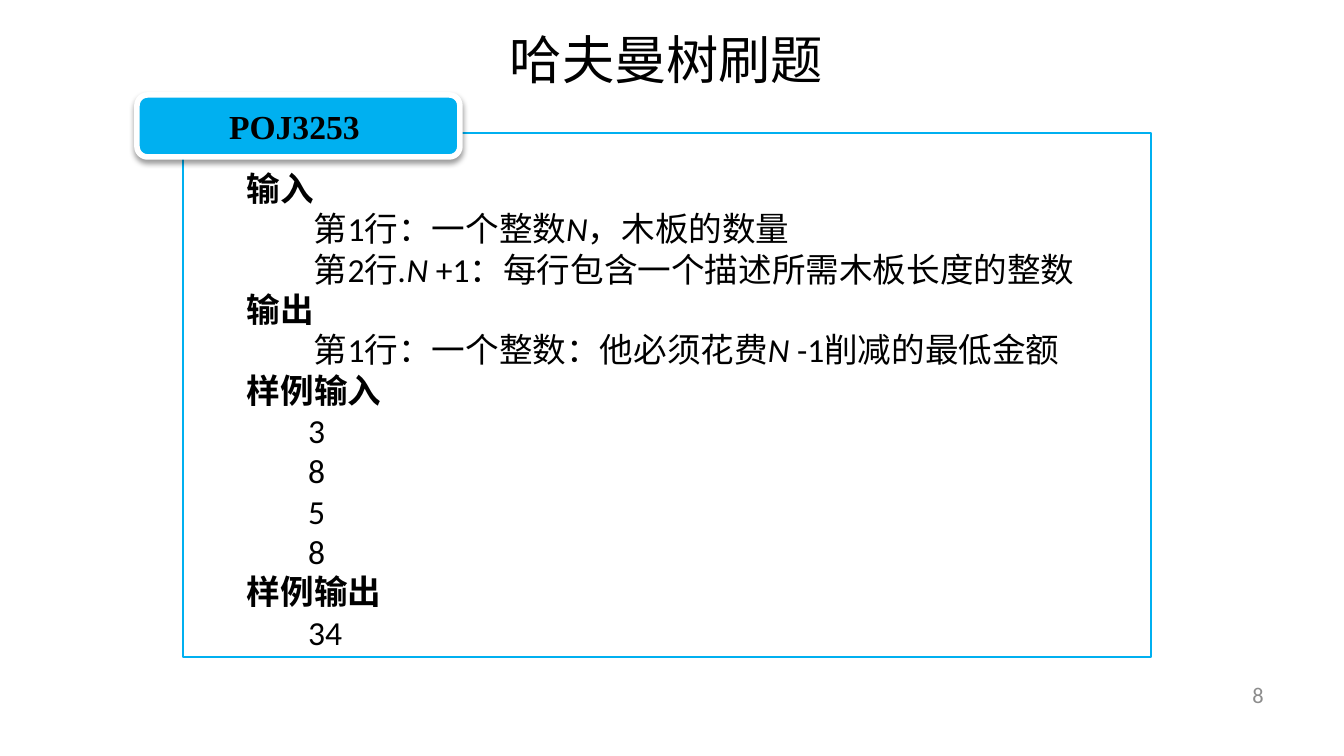
"""Build a slide stating the Huffman tree exercise POJ3253."""
import pptx
import pptx.dml.color
import pptx.enum.shapes
import pptx.enum.text
import pptx.oxml
import pptx.oxml.ns
import pptx.util
from lxml import etree

PX = 914400 / 134.4
BLACK = pptx.dml.color.RGBColor(0x00, 0x00, 0x00)
WHITE = pptx.dml.color.RGBColor(0xFF, 0xFF, 0xFF)
BLUE = pptx.dml.color.RGBColor(0x00, 0xB0, 0xF0)
GRAY = pptx.dml.color.RGBColor(0x8C, 0x8C, 0x8C)
CJK_FONT = "Noto Sans CJK SC"
ALIGN = pptx.enum.text.PP_ALIGN
ANCHOR = pptx.enum.text.MSO_ANCHOR
qn = pptx.oxml.ns.qn


def place(shape, left, top, width, height):
    shape.left, shape.top = round(left * PX), round(top * PX)
    shape.width, shape.height = round(width * PX), round(height * PX)


def style(paragraph, size, name, color, bold=False):
    font = paragraph.font
    font.size, font.name, font.bold = pptx.util.Pt(size), name, bold
    font.color.rgb = color
    defaults = paragraph._p.pPr.find(qn("a:defRPr"))
    etree.SubElement(defaults, qn("a:ea")).set("typeface", CJK_FONT)


presentation = pptx.Presentation()
presentation.slide_width = round(1344 * PX)
presentation.slide_height = round(756 * PX)
slide = presentation.slides.add_slide(presentation.slide_layouts[1])

title = slide.shapes.title
place(title, 445, -1, 443, 90)
title.text_frame.text = "哈夫曼树刷题"
title.text_frame.vertical_anchor = ANCHOR.TOP
title.text_frame.auto_size = pptx.enum.text.MSO_AUTO_SIZE.NONE
paragraph = title.text_frame.paragraphs[0]
paragraph.alignment = ALIGN.CENTER
paragraph.line_spacing = 1.35
style(paragraph, 28, CJK_FONT, BLACK)

body = slide.placeholders[1]
place(body, 183, 133, 968, 524)
body.fill.solid()
body.fill.fore_color.rgb = WHITE
fill_color = body._element.spPr.find(qn("a:solidFill"))[0]
etree.SubElement(fill_color, qn("a:alpha")).set("val", "90000")
body.line.color.rgb = BLUE
body.line.width = pptx.util.Pt(0.75)
frame = body.text_frame
frame.auto_size = pptx.enum.text.MSO_AUTO_SIZE.NONE
frame.margin_left, frame.margin_top = round(64 * PX), round(35 * PX)
frame.margin_right = frame.margin_bottom = 0

HEADING, DETAIL, SAMPLE = 0, 67, 61
lines = [
    (HEADING, ["输入"]),
    (DETAIL, ["第1行：一个整数", "N", "，木板的数量"]),
    (DETAIL, ["第2行", ".N ", "+1：每行包含一个描述所需木板长度的整数"]),
    (HEADING, ["输出"]),
    (DETAIL, ["第1行：一个整数：他必须花费", "N ", "-1削减的最低金额"]),
    (HEADING, ["样例输入"]),
    *[(SAMPLE, [number]) for number in ("3", "8", "5", "8")],
    (HEADING, ["样例输出"]),
    (SAMPLE, ["34"]),
]
for index, (indent, texts) in enumerate(lines):
    paragraph = frame.add_paragraph() if index else frame.paragraphs[0]
    paragraph.space_before = pptx.util.Pt(0)
    properties = paragraph._p.get_or_add_pPr()
    properties.set("marL", "0")
    properties.set("indent", str(round(indent * PX)))
    etree.SubElement(properties, qn("a:buNone"))
    style(paragraph, 18, "Calibri", BLACK, bold=indent == HEADING)
    for position, text in enumerate(texts):
        run = paragraph.add_run()
        run.text = text
        if position == 1:
            run.font.italic = True

badge = slide.shapes.add_shape(
    pptx.enum.shapes.MSO_SHAPE.ROUNDED_RECTANGLE, 0, 0, 0, 0)
place(badge, 137, 95, 323, 62)
badge.adjustments[0] = 0.17
badge.fill.solid()
badge.fill.fore_color.rgb = BLUE
badge.line.color.rgb = WHITE
badge.line.width = pptx.util.Pt(3)
badge.shadow.inherit = False
effects = badge._element.spPr.find(qn("a:effectLst"))
effects.append(pptx.oxml.parse_xml(
    f'<a:outerShdw {pptx.oxml.ns.nsdecls("a")} blurRad="39370" dist="20320" '
    'dir="5400000" rotWithShape="0"><a:srgbClr val="000000">'
    '<a:alpha val="38000"/></a:srgbClr></a:outerShdw>'))
frame = badge.text_frame
frame.margin_left, frame.margin_right = round(10 * PX), round(18 * PX)
frame.margin_top = frame.margin_bottom = 0
frame.vertical_anchor = ANCHOR.MIDDLE
frame.text = "POJ3253"
frame.paragraphs[0].alignment = ALIGN.CENTER
style(frame.paragraphs[0], 18, "Times New Roman", BLACK, bold=True)

page_number = slide.shapes.add_textbox(0, 0, 0, 0)
place(page_number, 964, 675, 313, 40)
frame = page_number.text_frame
frame.word_wrap = True
frame.vertical_anchor = ANCHOR.MIDDLE
frame.text = "8"
frame.paragraphs[0].alignment = ALIGN.RIGHT
style(frame.paragraphs[0], 12, "Calibri", GRAY)

presentation.save("out.pptx")
